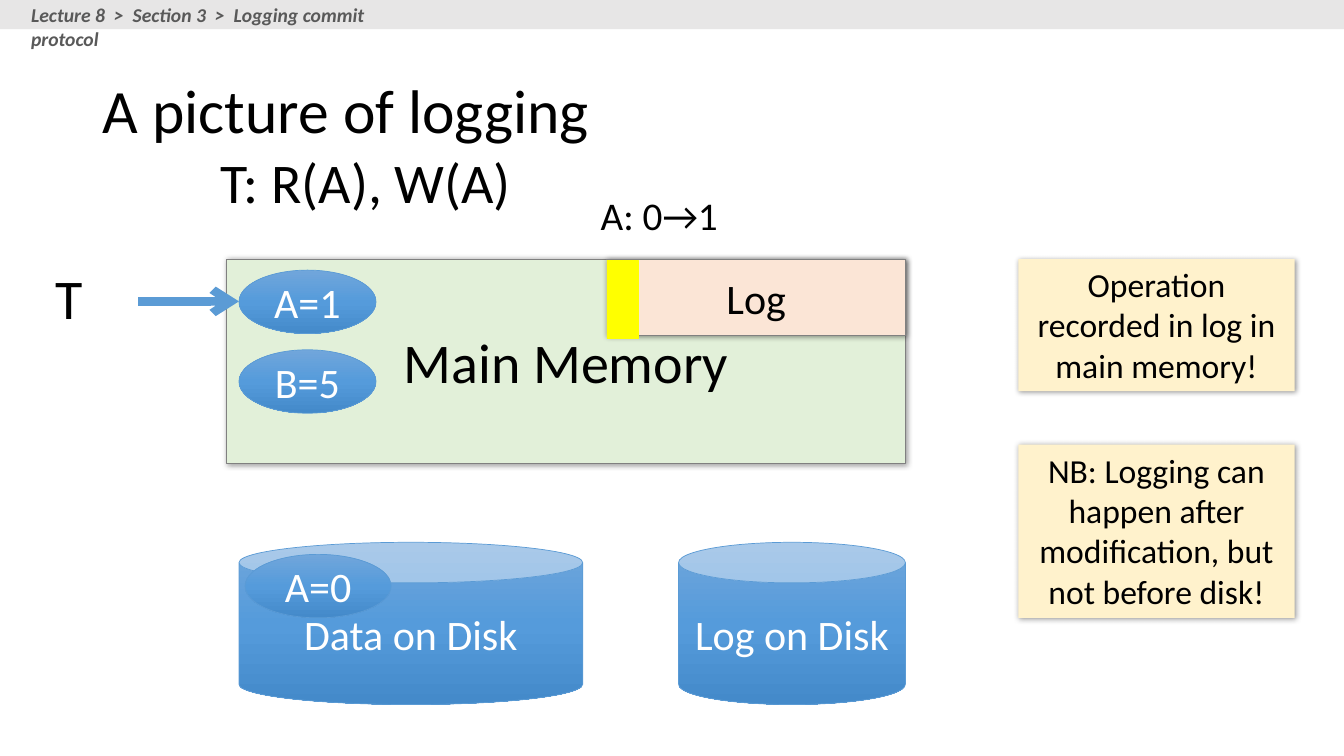
from lxml.etree import SubElement
from pptx import Presentation
from pptx.dml.color import RGBColor
from pptx.enum.shapes import MSO_CONNECTOR, MSO_SHAPE
from pptx.enum.text import MSO_ANCHOR, PP_ALIGN
from pptx.oxml import parse_xml
from pptx.oxml.ns import nsdecls, qn
from pptx.util import Inches, Pt

BLACK = RGBColor(0x00, 0x00, 0x00)
WHITE = RGBColor(0xFF, 0xFF, 0xFF)
BLUE = RGBColor(0x5B, 0x9B, 0xD5)
GRAY = RGBColor(0x80, 0x80, 0x80)
GREEN = RGBColor(0xE2, 0xF0, 0xD9)
PEACH = RGBColor(0xFB, 0xE5, 0xD6)
YELLOW = RGBColor(0xFF, 0xFF, 0x00)
CREAM = RGBColor(0xFF, 0xF2, 0xCC)
BAR = RGBColor(0xE7, 0xE6, 0xE6)
BAR_TEXT = RGBColor(0x59, 0x59, 0x59)
GRADIENT = [(0, "71A6DB"), (50, "559BDB"), (100, "448ACA")]
FONT = "Calibri"

# Content
TITLE = "A picture of logging"
BREADCRUMB = "Lecture 8  >  Section 3  >  Logging commit protocol"
TRANSACTION, STEPS, LOG_RECORD = "T ", "T: R(A), W(A) ", "A: 0→1"

# Shared edges
ROW_TOP, DISK_TOP, DISK_H = 2.57, 5.38, 1.61
DATA_LEFT, MEMORY_RIGHT = 2.37, 8.98
LOG_LEFT, LOG_DISK_LEFT = 6.02, 6.73
NOTE_LEFT, NOTE_W = 10.1, 2.74
VALUE_W, VALUE_H = 1.36, 0.63

DISKS = [("Data on Disk", DATA_LEFT, 3.41),
         ("Log on Disk", LOG_DISK_LEFT, MEMORY_RIGHT - LOG_DISK_LEFT)]
VALUES = [("A=1", DATA_LEFT, 2.68, VALUE_W),
          ("B=5", DATA_LEFT, 3.47, VALUE_W),
          ("A=0", 2.43, 5.5, 1.45)]
NOTES = [("NB: Logging can happen after modification, but not before disk!", 4.41, 1.72),
         ("Operation recorded in log in main memory!", ROW_TOP, 1.31)]

prs = Presentation()
prs.slide_width, prs.slide_height = Inches(13.33), Inches(7.5)
s = prs.slides.add_slide(prs.slide_layouts[5])


def write(sp, text, size=30, color=BLACK, align=PP_ALIGN.CENTER,
          anchor=MSO_ANCHOR.MIDDLE, bold=False, italic=False):
    tf = sp.text_frame
    tf.word_wrap = True
    tf.vertical_anchor = anchor
    p = tf.paragraphs[0]
    p.alignment = align
    r = p.add_run()
    r.text = text
    r.font.name, r.font.size, r.font.color.rgb = FONT, Pt(size), color
    r.font.bold, r.font.italic = bold, italic
    return p


def add_text(text, x, y, w, h, **fmt):
    sp = s.shapes.add_textbox(Inches(x), Inches(y), Inches(w), Inches(h))
    write(sp, text, anchor=MSO_ANCHOR.TOP, **fmt)


def add_box(kind, x, y, w, h, fill=None, line=None, shadow=False):
    """Add a shape; without a fill colour it gets the blue gradient."""
    sp = s.shapes.add_shape(kind, Inches(x), Inches(y), Inches(w), Inches(h))
    if fill is None:
        sp.fill.gradient()
        grad = sp._element.spPr.find(qn("a:gradFill"))
        stops = "".join(f'<a:gs pos="{pos * 1000}"><a:srgbClr val="{c}"/></a:gs>'
                        for pos, c in GRADIENT)
        grad.getparent().replace(grad, parse_xml(
            f'<a:gradFill {nsdecls("a")} rotWithShape="1"><a:gsLst>{stops}</a:gsLst>'
            '<a:lin ang="5400000" scaled="0"/></a:gradFill>'))
    else:
        sp.fill.solid()
        sp.fill.fore_color.rgb = fill
    if line is None:
        sp.line.fill.background()
    else:
        sp.line.color.rgb, sp.line.width = line, Pt(0.5)
    sp.shadow.inherit = False
    if shadow:
        sp._element.spPr.find(qn("a:effectLst")).append(parse_xml(
            f'<a:outerShdw {nsdecls("a")} blurRad="{Pt(4)}" dist="{Pt(1)}" dir="2700000" '
            'algn="tl" rotWithShape="0"><a:srgbClr val="000000"><a:alpha val="40000"/>'
            '</a:srgbClr></a:outerShdw>'))
    return sp


# Title
title = s.shapes.title
title.left, title.top = Inches(0.92), Inches(0.4)
title.width, title.height = Inches(11.5), Inches(1.45)
write(title, TITLE, size=44, align=PP_ALIGN.LEFT).line_spacing = 0.9

# Disks, main memory and log
for text, x, w in DISKS:
    write(add_box(MSO_SHAPE.CAN, x, DISK_TOP, w, DISK_H, line=BLUE), text, color=WHITE)
memory = add_box(MSO_SHAPE.RECTANGLE, 2.25, ROW_TOP, MEMORY_RIGHT - 2.25, 2.03,
                 fill=GREEN, line=GRAY, shadow=True)
write(memory, "Main Memory", size=40)
log = add_box(MSO_SHAPE.RECTANGLE, LOG_LEFT, ROW_TOP, MEMORY_RIGHT - LOG_LEFT, 0.76,
              fill=PEACH, line=GRAY, shadow=True)
write(log, "Log")
add_box(MSO_SHAPE.RECTANGLE, LOG_LEFT, 2.58, 0.31, 0.78, fill=YELLOW, line=YELLOW)

# Stored values
for text, x, y, w in VALUES:
    write(add_box(MSO_SHAPE.OVAL, x, y, w, VALUE_H, line=BLUE), text, color=WHITE)

# Transaction and its arrow into memory
add_text(TRANSACTION, 0, ROW_TOP, 1.49, 0.77, size=40)
add_text(STEPS, 1.67, 1.41, 4.04, 0.77, size=40)
add_text(LOG_RECORD, 5.86, 1.85, 1.87, 0.57, size=28, align=PP_ALIGN.LEFT)
arrow = s.shapes.add_connector(MSO_CONNECTOR.STRAIGHT, Inches(DATA_LEFT - 1), Inches(2.99),
                               Inches(DATA_LEFT), Inches(2.99))
arrow.line.color.rgb, arrow.line.width = BLUE, Pt(6)
SubElement(arrow.line._get_or_add_ln(), qn("a:tailEnd"), type="arrow")
SubElement(arrow._element.spPr, qn("a:effectLst"))

# Notes
for text, y, h in NOTES:
    note = add_box(MSO_SHAPE.RECTANGLE, NOTE_LEFT, y, NOTE_W, h, fill=CREAM, shadow=True)
    write(note, text, size=24, anchor=MSO_ANCHOR.TOP)

# Header bar
add_box(MSO_SHAPE.RECTANGLE, 0, 0, 13.33, 0.29, fill=BAR)
add_text(BREADCRUMB, 0.21, -0.02, 4.16, 0.34, size=14, color=BAR_TEXT,
         align=PP_ALIGN.LEFT, bold=True, italic=True)

prs.save("out.pptx")
